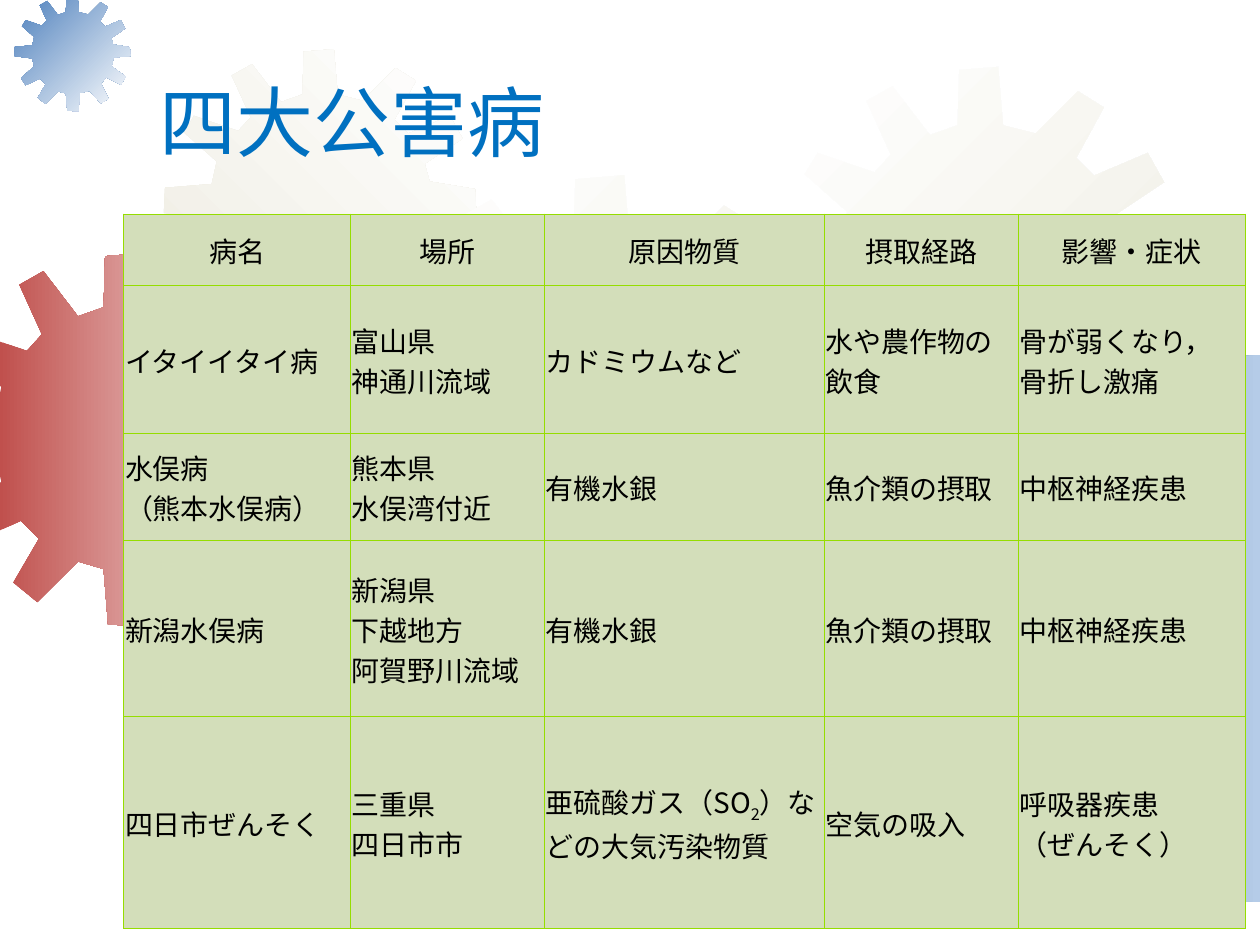
"""Build the slide on the four major pollution diseases."""
from copy import deepcopy
from dataclasses import dataclass

from lxml import etree
from pptx import Presentation
from pptx.dml.color import RGBColor
from pptx.enum.text import MSO_ANCHOR, PP_ALIGN
from pptx.oxml.ns import qn
from pptx.util import Pt

MIDDLE = MSO_ANCHOR.MIDDLE
CENTER = PP_ALIGN.CENTER
LEFT = PP_ALIGN.LEFT

SLIDE_WIDTH = 720
SLIDE_HEIGHT = 540
SUBSCRIPT_MARK = "|"

Point = tuple[float, float]


@dataclass(frozen=True)
class Theme:
    title_color: str = "0070C0"
    text_color: str = "000000"
    cell_fill: str = "D3DEBA"
    border_color: str = "95DD00"
    red: str = "C0504D"
    blue: str = "4F81BD"
    steel: str = "99ACC3"
    sky: str = "B5CCE8"
    cream: str = "EEECE1"
    white: str = "FFFFFF"
    title_size: float = 44
    table_size: float = 16
    border_width: float = 0.75
    title_font: str = "Arial"
    table_font: str = "Noto Sans CJK JP"


@dataclass(frozen=True)
class Gear:
    left: float
    top: float
    size: float
    colors: tuple[str, ...]
    angle: float = 0
    opacity: int = 100


THEME = Theme()

GEAR_UNITS = 248
GEAR_OUTLINE = (
    (158, 41), (138, 36), (135, 0), (111, 2), (110, 36), (93, 42), (70, 12), (54, 21),
    (69, 54), (59, 65), (24, 53), (16, 66), (42, 89), (38, 107), (1, 110), (0, 130),
    (38, 135), (42, 152), (14, 177), (24, 192), (55, 178), (67, 190), (50, 219), (66, 232),
    (93, 205), (110, 210), (113, 247), (137, 248), (140, 209), (161, 204), (185, 231), (201, 221),
    (185, 189), (196, 175), (228, 191), (238, 174), (208, 152), (212, 133), (248, 130), (247, 111),
    (211, 105), (207, 91), (237, 71), (227, 53), (194, 67), (183, 56), (200, 25), (184, 15),
)

GEARS = (
    Gear(-35.3, 144.7, 213.1, (THEME.red, THEME.white)),
    Gear(8.3, -2.6, 66.2, (THEME.blue, THEME.white), 45),
    Gear(93.6, 28.1, 178.6, (THEME.cream, THEME.white), 315),
    Gear(199.4, 100.1, 289, (THEME.white, THEME.cream), 45),
    Gear(0, 378, 269.3, (THEME.white,), opacity=50),
    Gear(353.5, 348.5, 178.6, (THEME.cream, THEME.white), 45),
    Gear(445, 38.2, 230.4, (THEME.white, THEME.cream), 45),
    Gear(563, 201.6, 314.6, (THEME.white, THEME.steel, THEME.sky)),
)

COLUMN_WIDTHS = (129.6, 110.9, 159.8, 110.9, 129.6)
ROW_HEIGHTS = (41, 84.2, 61.2, 100.8, 121)
ROWS = (
    ("病名", "場所", "原因物質", "摂取経路", "影響・症状"),
    ("イタイイタイ病", "富山県\n神通川流域", "カドミウムなど", "水や農作物の飲食", "骨が弱くなり，\n骨折し激痛"),
    ("水俣病\n（熊本水俣病）", "熊本県\n水俣湾付近", "有機水銀", "魚介類の摂取", "中枢神経疾患"),
    ("新潟水俣病", "新潟県\n下越地方\n阿賀野川流域", "有機水銀", "魚介類の摂取", "中枢神経疾患"),
    ("四日市ぜんそく", "三重県\n四日市市", "亜硫酸ガス（SO|2|）などの大気汚染物質", "空気の吸入", "呼吸器疾患\n（ぜんそく）"),
)


def clip(points: list[Point], axis: int, limit: float, sign: int) -> list[Point]:
    """Keep the part of a polygon on one side of an axis-aligned line."""
    kept = []
    for start, end in zip(points, points[1:] + points[:1]):
        start_gap = sign * (start[axis] - limit)
        end_gap = sign * (end[axis] - limit)
        if start_gap >= 0:
            kept.append(start)
        if start_gap * end_gap < 0:
            share = start_gap / (start_gap - end_gap)
            kept.append(tuple(a + share * (b - a) for a, b in zip(start, end)))
    return kept


def fill_gradient(shape, colors: tuple[str, ...], angle: float) -> None:
    """Spread the colours evenly along a clockwise angle."""
    shape.fill.gradient()
    shape.fill.gradient_angle = (360 - angle) % 360
    stop_list = shape._element.spPr.find(qn("a:gradFill")).find(qn("a:gsLst"))
    for _ in colors[2:]:
        stop_list.insert(1, deepcopy(stop_list[0]))
    for index, (stop, color) in enumerate(zip(shape.fill.gradient_stops, colors)):
        stop.color.rgb = RGBColor.from_string(color)
        stop.position = index / (len(colors) - 1)


def draw_gear(slide, gear: Gear) -> None:
    """Draw a gear trimmed to the slide edges."""
    scale = gear.size / GEAR_UNITS
    points = [(gear.left + x * scale, gear.top + y * scale) for x, y in GEAR_OUTLINE]
    for axis, limit in enumerate((SLIDE_WIDTH, SLIDE_HEIGHT)):
        points = clip(points, axis, 0, 1)
        points = clip(points, axis, limit, -1)
    outline = [(Pt(x), Pt(y)) for x, y in points]
    builder = slide.shapes.build_freeform(*outline[0])
    builder.add_line_segments(outline[1:], close=True)
    shape = builder.convert_to_shape()
    shape.shadow.inherit = False
    shape.line.fill.background()
    if len(gear.colors) > 1:
        fill_gradient(shape, gear.colors, gear.angle)
        return
    shape.fill.solid()
    shape.fill.fore_color.rgb = RGBColor.from_string(gear.colors[0])
    color = shape._element.spPr.find(qn("a:solidFill"))[0]
    etree.SubElement(color, qn("a:alpha"), val=str(gear.opacity * 1000))


def format_runs(paragraph, font: str, size: float, color: str) -> None:
    """Set the font of every run, including its East Asian face."""
    for run in paragraph.runs:
        run.font.size = Pt(size)
        run.font.name = font
        run.font.color.rgb = RGBColor.from_string(color)
        east_asian = etree.SubElement(run.font._element, qn("a:ea"))
        east_asian.set("typeface", THEME.table_font)


def split_subscripts(paragraph) -> None:
    """Lower the text found between subscript marks."""
    first, *others = paragraph.text.split(SUBSCRIPT_MARK)
    paragraph.text = first
    for index, piece in enumerate(others):
        run = paragraph.add_run()
        run.text = piece
        if index % 2 == 0:
            run.font._element.set("baseline", "-25000")


def draw_title(slide, text: str) -> None:
    """Write the slide title."""
    box = slide.shapes.add_textbox(Pt(84.2), Pt(23.8), Pt(612), Pt(90))
    text_frame = box.text_frame
    text_frame.word_wrap = True
    text_frame.vertical_anchor = MIDDLE
    text_frame.text = text
    format_runs(text_frame.paragraphs[0], THEME.title_font, THEME.title_size, THEME.title_color)


def draw_borders(cell) -> None:
    """Rule all four sides of a cell."""
    properties = cell._tc.get_or_add_tcPr()
    for side in ("lnL", "lnR", "lnT", "lnB"):
        line = etree.SubElement(properties, qn(f"a:{side}"), w=str(Pt(THEME.border_width)))
        fill = etree.SubElement(line, qn("a:solidFill"))
        etree.SubElement(fill, qn("a:srgbClr"), val=THEME.border_color)


def draw_cell(cell, text: str, alignment: PP_ALIGN) -> None:
    """Fill, rule and write one table cell."""
    draw_borders(cell)
    cell.fill.solid()
    cell.fill.fore_color.rgb = RGBColor.from_string(THEME.cell_fill)
    cell.margin_left = cell.margin_right = cell.margin_top = Pt(0.75)
    cell.margin_bottom = Pt(0)
    cell.vertical_anchor = MIDDLE
    cell.text_frame.text = text
    for paragraph in cell.text_frame.paragraphs:
        split_subscripts(paragraph)
        paragraph.alignment = alignment
        format_runs(paragraph, THEME.table_font, THEME.table_size, THEME.text_color)


def draw_table(slide) -> None:
    """Draw the table of diseases."""
    frame = slide.shapes.add_table(len(ROWS), len(COLUMN_WIDTHS), Pt(70.7), Pt(122.4),
                                   Pt(sum(COLUMN_WIDTHS)), Pt(sum(ROW_HEIGHTS)))
    table = frame.table
    table.first_row = table.horz_banding = False
    for column, width in zip(table.columns, COLUMN_WIDTHS):
        column.width = Pt(width)
    for index, (row, height, texts) in enumerate(zip(table.rows, ROW_HEIGHTS, ROWS)):
        row.height = Pt(height)
        for cell, text in zip(row.cells, texts):
            draw_cell(cell, text, LEFT if index else CENTER)


def main() -> None:
    """Assemble and save the presentation."""
    presentation = Presentation()
    presentation.slide_width = Pt(SLIDE_WIDTH)
    presentation.slide_height = Pt(SLIDE_HEIGHT)
    slide = presentation.slides.add_slide(presentation.slide_layouts[6])
    for gear in GEARS:
        draw_gear(slide, gear)
    draw_title(slide, "四大公害病")
    draw_table(slide)
    presentation.save("out.pptx")


if __name__ == "__main__":
    main()
